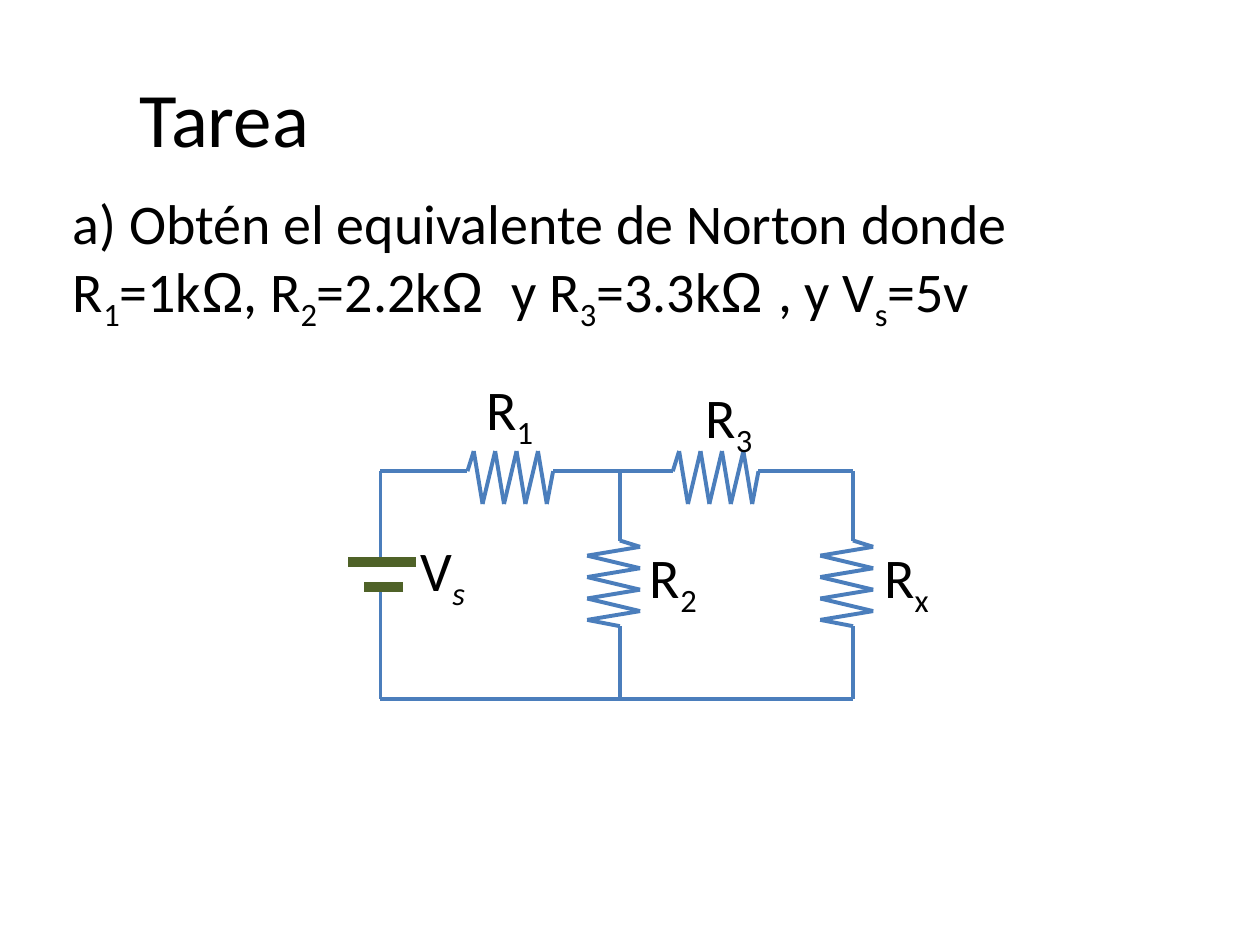
from dataclasses import dataclass
from itertools import pairwise

from lxml import etree
from pptx import Presentation
from pptx.dml.color import RGBColor
from pptx.enum.shapes import MSO_CONNECTOR
from pptx.enum.text import MSO_ANCHOR, PP_ALIGN
from pptx.oxml.ns import qn
from pptx.util import Inches, Pt

STRAIGHT = MSO_CONNECTOR.STRAIGHT
TOP_ANCHOR, MIDDLE_ANCHOR = MSO_ANCHOR.TOP, MSO_ANCHOR.MIDDLE
LEFT_ALIGN, CENTER_ALIGN = PP_ALIGN.LEFT, PP_ALIGN.CENTER


@dataclass(frozen=True)
class Theme:
    text: RGBColor = RGBColor(0x00, 0x00, 0x00)
    wire: RGBColor = RGBColor(0x4B, 0x7E, 0xBC)
    battery: RGBColor = RGBColor(0x4F, 0x62, 0x28)
    font: str = "Calibri"
    symbol_font: str = "Arial"
    title_size: float = 44
    body_size: float = 32
    space_before: float = 2
    wire_width: float = 2.25
    battery_width: float = 5.5


THEME = Theme()

# Circuit grid, in inches: three columns between two rails
SOURCE_X, MIDDLE_X, LOAD_X = 3.02, 4.92, 6.77
TOP_Y, BOTTOM_Y = 3.74, 5.55
PLATE_TOP_Y, PLATE_BOTTOM_Y = 4.46, 4.66

# Resistor outline: lead, four teeth, lead
LEAD, TEETH, PITCH = 0.29, 4, 0.17
RESISTOR_LENGTH = 1.26
PEAK, TROUGH = -0.16, 0.26

# Span styles
PLAIN, SUB, ITALIC_SUB, SYMBOL = "plain", "sub", "italic sub", "symbol"


def add_text(page, place, spans, size, align=LEFT_ALIGN, anchor=TOP_ANCHOR,
             space_before=THEME.space_before):
    box = page.shapes.add_textbox(*(Inches(length) for length in place))
    frame = box.text_frame
    frame.word_wrap = True
    frame.vertical_anchor = anchor
    para = frame.paragraphs[0]
    para.alignment = align
    para.space_before = Pt(space_before)
    for text, style in spans:
        span = para.add_run()
        span.text = text
        span.font.size = Pt(size)
        span.font.color.rgb = THEME.text
        span.font.name = THEME.symbol_font if style == SYMBOL else THEME.font
        if style in (SUB, ITALIC_SUB):
            span.font._element.set("baseline", "-25000")
        if style == ITALIC_SUB:
            span.font.italic = True


def add_line(shapes, start, end, color=THEME.wire, width=THEME.wire_width):
    points = (Inches(length) for length in (*start, *end))
    line = shapes.add_connector(STRAIGHT, *points)
    line.line.color.rgb = color
    line.line.width = Pt(width)
    etree.SubElement(line._element.spPr, qn("a:effectLst"))


def add_resistor(page, x, y, vertical=False):
    outline = [(0, 0), (LEAD, 0)]
    for tooth in range(TEETH):
        shift = tooth * PITCH
        outline += [(0.34 + shift, PEAK), (0.41 + shift, TROUGH)]
    outline += [(RESISTOR_LENGTH - LEAD, 0), (RESISTOR_LENGTH, 0)]
    if vertical:
        points = [(x - across, y + along) for along, across in outline]
    else:
        points = [(x + along, y + across) for along, across in outline]
    group = page.shapes.add_group_shape()
    for start, end in pairwise(points):
        add_line(group.shapes, start, end)


def add_battery(page):
    group = page.shapes.add_group_shape()
    for y, left, right in ((PLATE_TOP_Y, 2.76, 3.3), (PLATE_BOTTOM_Y, 2.89, 3.2)):
        add_line(group.shapes, (right, y), (left, y),
                 THEME.battery, THEME.battery_width)


def add_label(page, left, top, width, letter, index, style=SUB):
    add_text(page, (left, top, width, 0.66),
             [(letter, PLAIN), (index, style)], THEME.body_size)


def add_wires(page):
    wires = [
        # Rails
        ((SOURCE_X, BOTTOM_Y), (LOAD_X, BOTTOM_Y)),
        ((SOURCE_X, TOP_Y), (3.55, TOP_Y)),
        ((4.59, TOP_Y), (5.13, TOP_Y)),
        ((6.23, TOP_Y), (LOAD_X, TOP_Y)),
        # Source branch
        ((SOURCE_X, TOP_Y), (SOURCE_X, PLATE_TOP_Y)),
        ((SOURCE_X, PLATE_BOTTOM_Y), (SOURCE_X, BOTTOM_Y)),
    ]
    # Ends of the two resistor branches
    for x in (MIDDLE_X, LOAD_X):
        wires += [((x, TOP_Y), (x, 4.11)), ((x, 5.19), (x, BOTTOM_Y))]
    for start, end in wires:
        add_line(page.shapes, start, end)


def main():
    deck = Presentation()
    deck.slide_width, deck.slide_height = Inches(10), Inches(7.5)
    page = deck.slides.add_slide(deck.slide_layouts[6])

    # Heading and task
    add_text(page, (0.5, 0.3, 2.7, 1.25), [("Tarea ", PLAIN)],
             THEME.title_size, CENTER_ALIGN, MIDDLE_ANCHOR, space_before=0)
    task = [
        ("a) Obtén el equivalente de Norton donde R", PLAIN), ("1", SUB),
        ("=1k", PLAIN), ("Ω", SYMBOL), (", R", PLAIN), ("2", SUB),
        ("=2.2k", PLAIN), ("Ω ", SYMBOL), (" y R", PLAIN), ("3", SUB),
        ("=3.3k", PLAIN), ("Ω ", SYMBOL), (", y V", PLAIN), ("s", SUB),
        ("=5v", PLAIN),
    ]
    add_text(page, (0.48, 1.45, 9, 1.43), task, THEME.body_size)

    # Circuit
    add_wires(page)
    for x in (3.42, 5.05):
        add_resistor(page, x, TOP_Y)
    for x in (MIDDLE_X, LOAD_X):
        add_resistor(page, x, 4, vertical=True)
    add_battery(page)

    # Component names
    add_label(page, 3.76, 2.92, 1.35, "R", "1")
    add_label(page, 5.06, 4.26, 0.67, "R", "2")
    add_label(page, 5.5, 2.99, 1.35, "R", "3")
    add_label(page, 6.92, 4.26, 0.67, "R", "x")
    add_label(page, 3.24, 4.2, 1.35, "V", "s", ITALIC_SUB)

    deck.save("out.pptx")


if __name__ == "__main__":
    main()
